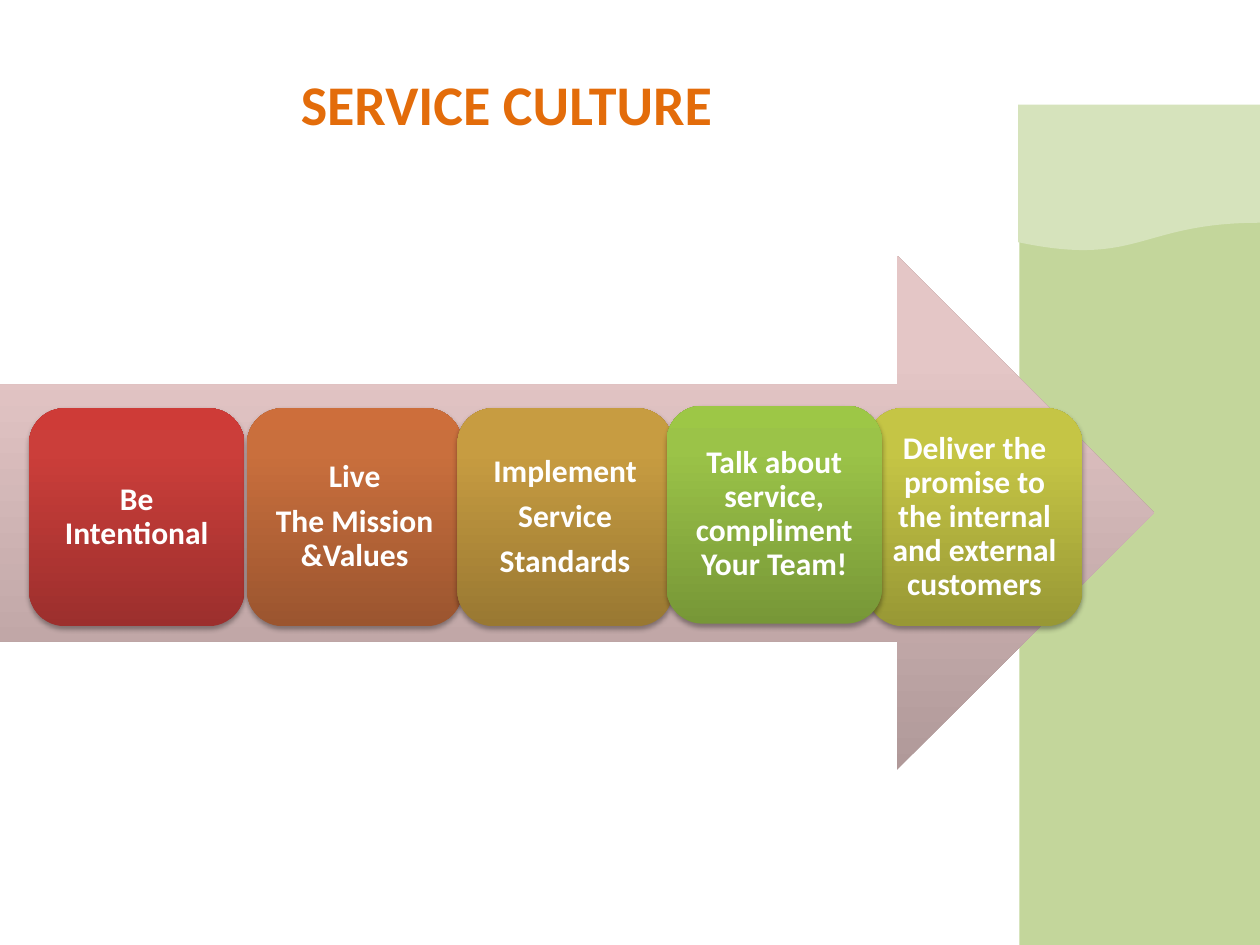
from dataclasses import dataclass

from lxml.etree import SubElement
from pptx import Presentation
from pptx.dml.color import RGBColor
from pptx.enum.shapes import MSO_SHAPE
from pptx.enum.text import MSO_ANCHOR, PP_ALIGN
from pptx.oxml.ns import qn
from pptx.util import Inches, Pt

# The page is a grid of 10 columns by 7.5 rows with square cells.
CELL = Inches(1)
COLUMNS, ROWS = 10, 7.5

FONT = "Calibri"
WHITE = RGBColor(0xFF, 0xFF, 0xFF)
BLACK = RGBColor(0x00, 0x00, 0x00)
ORANGE = RGBColor(0xE3, 0x6C, 0x0A)
GREEN = RGBColor(0xC3, 0xD6, 0x9B)
PALE_GREEN = RGBColor(0xD6, 0xE3, 0xBC)


@dataclass(frozen=True)
class Frame:
    column: float
    row: float
    columns: float
    rows: float

    def lengths(self) -> list[int]:
        return [round(cells * CELL)
                for cells in (self.column, self.row, self.columns, self.rows)]


@dataclass(frozen=True)
class Shades:
    bottom: RGBColor
    upper: RGBColor
    top: RGBColor


@dataclass(frozen=True)
class Card:
    column: float
    row: float
    lines: tuple[str, ...]
    shades: Shades


ARROW_SHADES = Shades(RGBColor(0xB0, 0x99, 0x99), RGBColor(0xE4, 0xC6, 0xC6),
                      RGBColor(0xE6, 0xC6, 0xC6))
RED_SHADES = Shades(RGBColor(0x9C, 0x2F, 0x2D), RGBColor(0xCB, 0x3E, 0x3A),
                    RGBColor(0xCE, 0x3B, 0x37))
RUST_SHADES = Shades(RGBColor(0x9B, 0x55, 0x2F), RGBColor(0xC9, 0x6F, 0x3D),
                     RGBColor(0xCD, 0x6E, 0x3B))
GOLD_SHADES = Shades(RGBColor(0x99, 0x78, 0x32), RGBColor(0xC7, 0x9C, 0x41),
                     RGBColor(0xCA, 0x9D, 0x3F))
OLIVE_SHADES = Shades(RGBColor(0x98, 0x98, 0x35), RGBColor(0xC5, 0xC5, 0x45),
                      RGBColor(0xC8, 0xC8, 0x42))
LIME_SHADES = Shades(RGBColor(0x77, 0x97, 0x37), RGBColor(0x9B, 0xC3, 0x48),
                     RGBColor(0x9D, 0xC7, 0x46))

CARD_COLUMNS, CARD_ROWS, CARD_ROW = 1.71, 1.73, 3.24
# Back to front: the lime card overlaps the olive one.
CARDS = (
    Card(0.23, CARD_ROW, ("Be Intentional",), RED_SHADES),
    Card(1.96, CARD_ROW, ("Live", "The Mission &Values"), RUST_SHADES),
    Card(3.63, CARD_ROW, ("Implement", "Service", "Standards"), GOLD_SHADES),
    Card(6.88, CARD_ROW,
         ("Deliver the promise to the internal and external customers",),
         OLIVE_SHADES),
    Card(5.29, 3.22, ("Talk about service, compliment Your Team!",),
         LIME_SHADES),
)


def add_plain_shape(page, kind: MSO_SHAPE, frame: Frame):
    """Add a shape without outline or shadow."""
    shape = page.shapes.add_shape(kind, *frame.lengths())
    shape.shadow.inherit = False
    shape.line.fill.background()
    return shape


def fill_solid(shape, color: RGBColor) -> None:
    shape.fill.solid()
    shape.fill.fore_color.rgb = color


def fill_shades(shape, shades: Shades) -> None:
    """Fill with a three-stop gradient that runs from bottom to top."""
    shape.fill.gradient()
    shape.fill.gradient_angle = 90
    stops = shape._element.spPr.find(qn("a:gradFill")).find(qn("a:gsLst"))
    for stop in list(stops):
        stops.remove(stop)
    for percent, color in ((0, shades.bottom), (80, shades.upper),
                           (100, shades.top)):
        stop = SubElement(stops, qn("a:gs"), pos=str(percent * 1000))
        SubElement(stop, qn("a:srgbClr"), val=str(color))


def add_drop_shadow(shape) -> None:
    effects = shape._element.spPr.find(qn("a:effectLst"))
    shadow = SubElement(effects, qn("a:outerShdw"), blurRad=str(Pt(3.1)),
                        dist=str(Pt(1.8)), dir=str(90 * 60000),
                        rotWithShape="0")
    color = SubElement(shadow, qn("a:srgbClr"), val=str(BLACK))
    SubElement(color, qn("a:alpha"), val=str(35 * 1000))


def write_text(box, lines: tuple[str, ...], *, size: float, color: RGBColor,
               line_spacing: float = 1, space_after: float = 0) -> None:
    text_frame = box.text_frame
    text_frame.word_wrap = True
    text_frame.vertical_anchor = MSO_ANCHOR.MIDDLE
    for index, line in enumerate(lines):
        paragraph = (text_frame.add_paragraph() if index
                     else text_frame.paragraphs[0])
        paragraph.alignment = PP_ALIGN.CENTER
        paragraph.line_spacing = line_spacing
        paragraph.space_after = Pt(space_after)
        span = paragraph.add_run()
        span.text = line
        span.font.name = FONT
        span.font.size = Pt(size)
        span.font.bold = True
        span.font.color.rgb = color


def add_card(page, card: Card) -> None:
    frame = Frame(card.column, card.row, CARD_COLUMNS, CARD_ROWS)
    box = add_plain_shape(page, MSO_SHAPE.ROUNDED_RECTANGLE, frame)
    fill_shades(box, card.shades)
    add_drop_shadow(box)
    text_frame = box.text_frame
    text_frame.margin_left = text_frame.margin_right = Inches(0.08)
    text_frame.margin_top = text_frame.margin_bottom = Inches(0.08)
    write_text(box, card.lines, size=18, color=WHITE,
               line_spacing=0.9, space_after=6.3)


def add_title(page, title: str) -> None:
    box = page.shapes.add_textbox(*Frame(0.17, 0.25, 7.58, 0.94).lengths())
    box.text_frame.margin_left = Inches(0.22)
    box.text_frame.margin_top = Inches(0.24)
    write_text(box, (title,), size=32, color=ORANGE)


def main() -> None:
    deck = Presentation()
    deck.slide_width = round(COLUMNS * CELL)
    deck.slide_height = round(ROWS * CELL)
    page = deck.slides.add_slide(deck.slide_layouts[6])

    panel = add_plain_shape(page, MSO_SHAPE.RECTANGLE,
                            Frame(8.09, 1.11, COLUMNS - 8.09, ROWS - 1.11))
    fill_solid(panel, GREEN)
    wave = add_plain_shape(page, MSO_SHAPE.FLOWCHART_DOCUMENT,
                           Frame(8.08, 0.83, COLUMNS - 8.08, 1.17))
    fill_solid(wave, PALE_GREEN)
    arrow = add_plain_shape(page, MSO_SHAPE.RIGHT_ARROW,
                            Frame(0, 2.03, 9.16, 4.08))
    fill_shades(arrow, ARROW_SHADES)

    for card in CARDS:
        add_card(page, card)
    add_title(page, "SERVICE CULTURE")
    deck.save("out.pptx")


if __name__ == "__main__":
    main()
